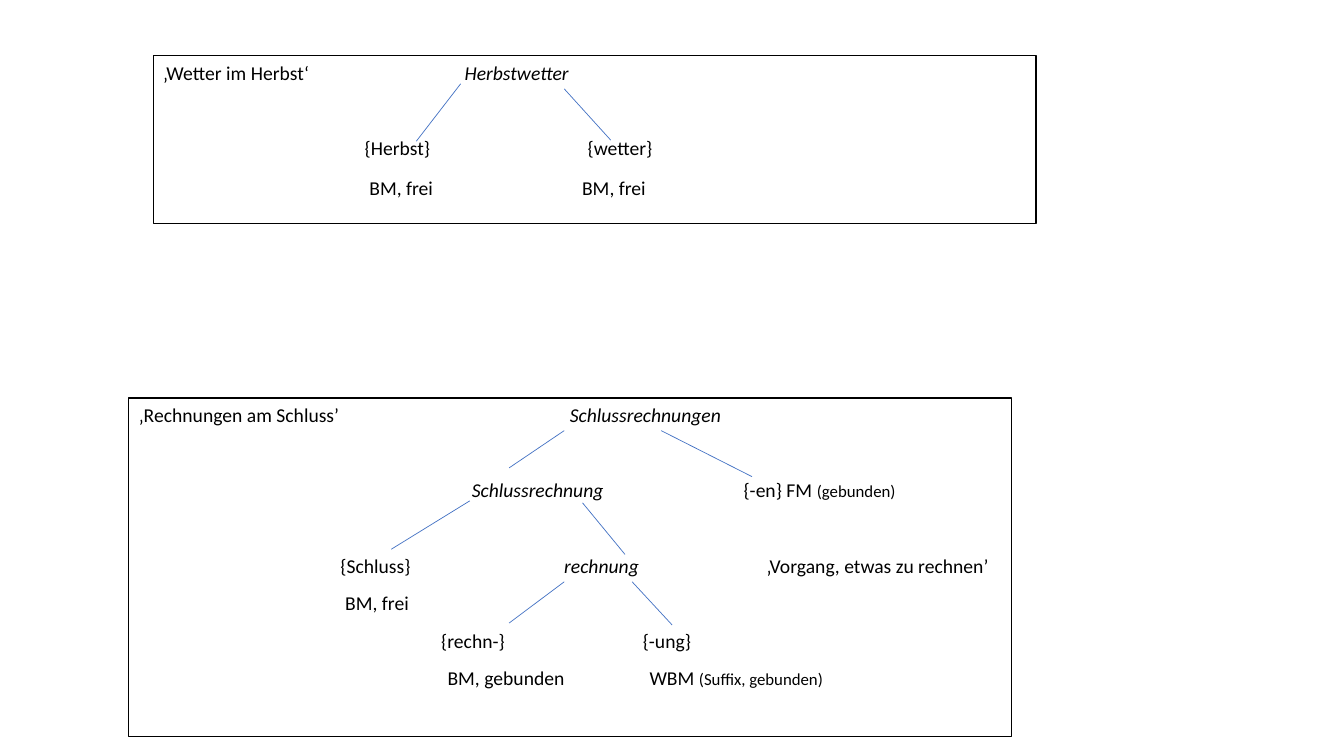
from dataclasses import dataclass

from lxml import etree
from pptx import Presentation
from pptx.dml.color import RGBColor
from pptx.enum.shapes import MSO_CONNECTOR, MSO_SHAPE
from pptx.enum.text import MSO_ANCHOR, PP_ALIGN
from pptx.oxml.ns import qn
from pptx.util import Cm, Pt

RECTANGLE = MSO_SHAPE.RECTANGLE
STRAIGHT = MSO_CONNECTOR.STRAIGHT
TOP = MSO_ANCHOR.TOP
LEFT = PP_ALIGN.LEFT
PLAIN, WORD, SMALL = "plain", "word", "small"


@dataclass(frozen=True)
class Theme:
    font: str = "Calibri"
    ink: RGBColor = RGBColor(0x00, 0x00, 0x00)
    paper: RGBColor = RGBColor(0xFF, 0xFF, 0xFF)
    branch: RGBColor = RGBColor(0x44, 0x72, 0xC4)
    body_size: float = 14
    small_size: float = 12
    frame_width: float = 0.75
    branch_width: float = 0.5


ROW_GAP = 10
SKIPPED_ROW_GAP = 37

HERBSTWETTER_ROWS = [
    ([7.6], SKIPPED_ROW_GAP, [("‚Wetter im Herbst‘\t", PLAIN), ("Herbstwetter", WORD)]),
    ([5.08, 10.7], 12, [("\t{Herbst}\t{wetter}", PLAIN)]),
    ([5.2, 10.56], ROW_GAP, [("\tBM, frei\tBM, frei", PLAIN)]),
]

SCHLUSSRECHNUNGEN_ROWS = [
    ([10.86], SKIPPED_ROW_GAP,
     [("‚Rechnungen am Schluss’\t", PLAIN), ("Schlussrechnungen", WORD)]),
    ([8.39, 15.24], SKIPPED_ROW_GAP,
     [("\t", PLAIN), ("Schlussrechnung", WORD), ("\t{-en} FM ", PLAIN), ("(gebunden)", SMALL)]),
    ([5.08, 10.72, 15.82], ROW_GAP,
     [("\t{Schluss}\t", PLAIN), ("rechnung", WORD), ("\t‚Vorgang, etwas zu rechnen’", PLAIN)]),
    ([5.2], ROW_GAP, [("\tBM, frei", PLAIN)]),
    ([7.62, 12.7], ROW_GAP, [("\t{rechn-}\t{-ung}", PLAIN)]),
    ([7.78, 12.87], ROW_GAP,
     [("\tBM, gebunden\tWBM ", PLAIN), ("(Suffix, gebunden)", SMALL)]),
]

BRANCHES = [
    (11.61, 2.11, 10.49, 3.56),
    (14.22, 2.24, 15.39, 3.53),
    (16.66, 10.85, 18.95, 12.01),
    (14.22, 10.85, 12.83, 11.79),
    (11.84, 12.62, 9.86, 13.84),
    (14.68, 12.67, 15.75, 13.97),
    (14.22, 14.66, 12.83, 15.7),
    (15.93, 14.66, 16.94, 15.75),
]


class TreeSlide:
    def __init__(self, slide, theme):
        self.slide = slide
        self.theme = theme

    def word_box(self, left, top, width, height, rows):
        shape = self.slide.shapes.add_shape(
            RECTANGLE, Cm(left), Cm(top), Cm(width), Cm(height))
        shape.shadow.inherit = False
        shape.fill.solid()
        shape.fill.fore_color.rgb = self.theme.paper
        shape.line.color.rgb = self.theme.ink
        shape.line.width = Pt(self.theme.frame_width)
        frame = shape.text_frame
        frame.word_wrap = True
        frame.vertical_anchor = TOP
        for index, row in enumerate(rows):
            paragraph = frame.add_paragraph() if index else frame.paragraphs[0]
            self.row(paragraph, *row)

    def row(self, paragraph, stops, gap, pieces):
        paragraph.alignment = LEFT
        paragraph.space_after = Pt(gap)
        self.tab_stops(paragraph, stops)
        paragraph.font.name = self.theme.font
        paragraph.font.size = Pt(self.theme.body_size)
        paragraph.font.color.rgb = self.theme.ink
        for text, style in pieces:
            run = paragraph.add_run()
            run.text = text
            if style == WORD:
                run.font.italic = True
            elif style == SMALL:
                run.font.size = Pt(self.theme.small_size)

    def tab_stops(self, paragraph, stops):
        properties = paragraph._p.get_or_add_pPr()
        tab_list = etree.SubElement(properties, qn("a:tabLst"))
        for stop in stops:
            etree.SubElement(tab_list, qn("a:tab"), pos=str(int(Cm(stop))), algn="l")

    def branch(self, *ends):
        connector = self.slide.shapes.add_connector(STRAIGHT, *map(Cm, ends))
        connector.line.color.rgb = self.theme.branch
        connector.line.width = Pt(self.theme.branch_width)
        etree.SubElement(connector._element.spPr, qn("a:effectLst"))


def main():
    presentation = Presentation()
    presentation.slide_width = Cm(33.87)
    presentation.slide_height = Cm(19.05)
    slide = presentation.slides.add_slide(presentation.slide_layouts[6])
    trees = TreeSlide(slide, Theme())
    trees.word_box(3.25, 10.03, 22.25, 8.53, SCHLUSSRECHNUNGEN_ROWS)
    trees.word_box(3.86, 1.4, 22.25, 4.24, HERBSTWETTER_ROWS)
    for ends in BRANCHES:
        trees.branch(*ends)
    presentation.save("out.pptx")


if __name__ == "__main__":
    main()
